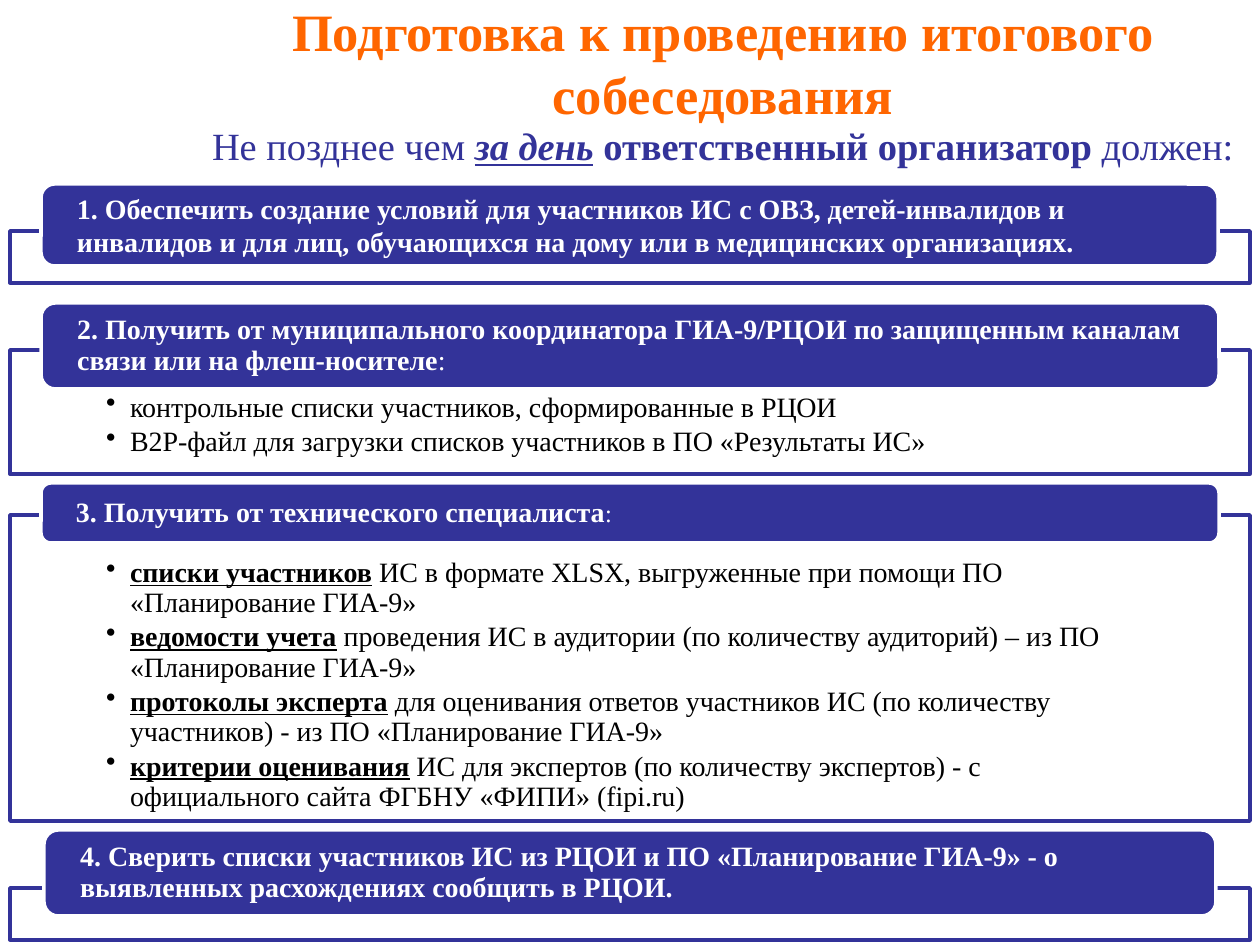
from lxml.etree import SubElement
from pptx import Presentation
from pptx.dml.color import RGBColor
from pptx.enum.shapes import MSO_SHAPE as SHAPE
from pptx.enum.text import MSO_ANCHOR as ANCHOR, PP_ALIGN as ALIGN
from pptx.oxml.ns import qn
from pptx.util import Emu, Pt

SCALE = 914400 / 126
INDENT = 24
NAVY, ORANGE, WHITE, BLACK = "333399", "FF6600", "FFFFFF", "000000"
BOLD = {"bold": True}
MARKED = {"bold": True, "underline": True}


def px(n):
    return Emu(round(n * SCALE))


def rgb(value):
    return RGBColor.from_string(value)


class Deck:
    font = "Times New Roman"

    def __init__(self, width, height):
        self.prs = Presentation()
        self.prs.slide_width, self.prs.slide_height = px(width), px(height)
        self.slide = self.prs.slides.add_slide(self.prs.slide_layouts[6])

    def fill_text(self, s, paragraphs, size, color, insets, anchor=ANCHOR.TOP,
                  align=ALIGN.LEFT, spacing=1.0, bullets=False):
        """Each paragraph is a list of (text, format dict) runs."""
        tf = s.text_frame
        tf.word_wrap, tf.vertical_anchor = True, anchor
        for side, value in zip(("left", "top", "right", "bottom"), insets):
            setattr(tf, "margin_" + side, px(value))
        for i, runs in enumerate(paragraphs):
            p = tf.add_paragraph() if i else tf.paragraphs[0]
            p.alignment, p.line_spacing = align, spacing
            if bullets:
                p.space_after = Pt(2.4)
                pr = p._p.get_or_add_pPr()
                pr.set("marL", str(px(INDENT)))
                pr.set("indent", str(-px(INDENT)))
                SubElement(pr, qn("a:buChar"), char="•")
            for text, style in runs:
                r = p.add_run()
                r.text = text
                r.font.color.rgb = rgb(color)
                for name, value in {"name": self.font, "size": Pt(size), **style}.items():
                    setattr(r.font, name, value)

    def text(self, box, runs, size, color, **options):
        s = self.slide.shapes.add_textbox(*map(px, box))
        self.fill_text(s, [runs], size, color, (13, 6, 13, 6), **options)

    def shape(self, kind, box, fill, line):
        s = self.slide.shapes.add_shape(kind, *map(px, box))
        s.shadow.inherit = False
        s.fill.solid()
        s.fill.fore_color.rgb = rgb(fill)
        s.line.color.rgb = rgb(line)
        s.line.width = Pt(2)
        return s

    def frame(self, top, height, items):
        s = self.shape(SHAPE.RECTANGLE, (10, top, 1240, height), WHITE, NAVY)
        color = s._element.spPr.find(qn("a:solidFill"))[0]
        SubElement(color, qn("a:alpha"), val="90000")
        if items:
            self.fill_text(s, items, 16, BLACK, (96, 43, 96, 15), spacing=0.9, bullets=True)

    def header(self, box, runs, spacing):
        s = self.shape(SHAPE.ROUNDED_RECTANGLE, box, NAVY, WHITE)
        self.fill_text(s, [runs], 16, WHITE, (32, 0, 32, 0), ANCHOR.MIDDLE, spacing=spacing)


# Each step: frame top and height, header box, line spacing, header runs, bullets
STEPS = [
    (231, 52, (41, 184, 1177, 82), 1.0,
     [("1. Обеспечить создание условий для участников ИС с ОВЗ, детей-инвалидов и "
       "инвалидов и для лиц, обучающихся на дому или в медицинских организациях.", BOLD)],
     []),
    (350, 124, (41, 303, 1178, 86), 0.9,
     [("2. Получить от муниципального координатора ГИА-9/РЦОИ по защищенным каналам "
       "связи или на флеш-носителе", BOLD), (":", {})],
     [[("контрольные списки участников, сформированные в РЦОИ", {})],
      [("B2P-файл для загрузки списков участников в ПО «Результаты ИС»", {})]]),
    (515, 306, (41, 483, 1178, 60), 0.9,
     [("3. Получить от технического специалиста", BOLD), (":", {"size": Pt(14)})],
     [[("списки участников", MARKED),
       (" ИС в формате XLSX, выгруженные при помощи ПО «Планирование ГИА-9»", {})],
      [("ведомости учета", MARKED),
       (" проведения ИС в аудитории (по количеству аудиторий) – из ПО "
        "«Планирование ГИА-9»", {})],
      [("протоколы эксперта", MARKED),
       (" для оценивания ответов участников ИС (по количеству участников) - из ПО "
        "«Планирование ГИА-9»", {})],
      [("критерии оценивания", MARKED),
       (" ИС для экспертов (по количеству экспертов) - с официального сайта "
        "ФГБНУ «ФИПИ» (fipi.ru)", {})]]),
    (888, 52, (44, 830, 1172, 86), 0.9,
     [("4. Сверить списки участников ИС из РЦОИ и ПО «Планирование ГИА-9» - о "
       "выявленных расхождениях сообщить в РЦОИ.", BOLD)],
     []),
]


def main():
    deck = Deck(1260, 945)

    # Title and subtitle
    deck.text((202, 0, 1042, 125), [("Подготовка к проведению итогового собеседования", BOLD)],
              30, ORANGE, anchor=ANCHOR.MIDDLE, align=ALIGN.CENTER)
    deck.text((199, 116, 1066, 59),
              [("Не позднее чем ", {}), ("за день", {**MARKED, "italic": True}), (" ", {}),
               ("ответственный организатор ", BOLD), ("должен:", {})], 22, NAVY)

    # Steps
    for top, height, box, spacing, runs, items in STEPS:
        deck.frame(top, height, items)
        deck.header(box, runs, spacing)

    deck.prs.save("out.pptx")


if __name__ == "__main__":
    main()
